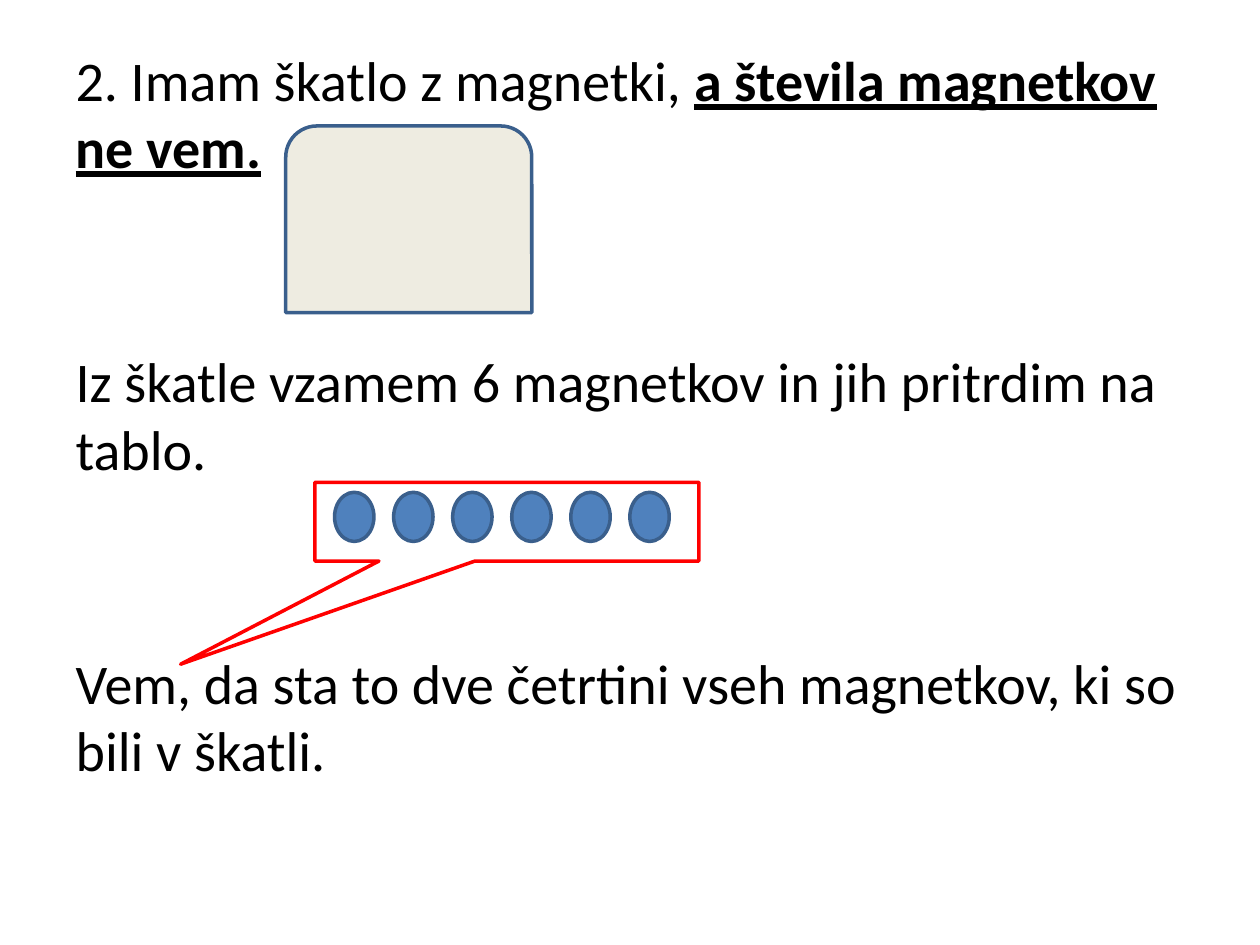
from pptx import Presentation
from pptx.dml.color import RGBColor
from pptx.enum.shapes import MSO_SHAPE
from pptx.enum.text import MSO_ANCHOR, MSO_AUTO_SIZE
from pptx.util import Pt

BLACK = RGBColor(0x00, 0x00, 0x00)
BLUE = RGBColor(0x4F, 0x81, 0xBD)
DARK_BLUE = RGBColor(0x3A, 0x5F, 0x8C)
CREAM = RGBColor(0xEE, 0xEC, 0xE1)
RED = RGBColor(0xFF, 0x00, 0x00)


def add_span(para, text, size=32, bold=False, underline=False, color=BLACK):
    span = para.add_run()
    span.text = text
    span.font.name = "Calibri"
    span.font.size = Pt(size)
    span.font.bold = bold
    span.font.underline = underline
    span.font.color.rgb = color


def add_outlined(page, kind, left, top, width, height, line, fill=None):
    shape = page.shapes.add_shape(kind, Pt(left), Pt(top), Pt(width), Pt(height))
    shape.shadow.inherit = False
    shape.line.color.rgb = line
    shape.line.width = Pt(2)
    if fill is None:
        shape.fill.background()
    else:
        shape.fill.solid()
        shape.fill.fore_color.rgb = fill
    return shape


deck = Presentation()
deck.slide_width, deck.slide_height = Pt(720), Pt(540)
page = deck.slides.add_slide(deck.slide_layouts[1])
title = page.shapes.title
title.element.getparent().remove(title.element)

# Exercise text, with room between the steps for the drawings
body = page.placeholders[1]
body.left, body.top, body.width, body.height = Pt(36), Pt(22.3), Pt(648), Pt(460)
frame = body.text_frame
frame.word_wrap = True
frame.auto_size = MSO_AUTO_SIZE.NONE
frame.vertical_anchor = MSO_ANCHOR.TOP

steps = [
    [("2. Imam škatlo z magnetki, ", False), ("a števila magnetkov ne vem.", True)],
    [("Iz škatle vzamem 6 magnetkov in jih pritrdim na tablo.", False)],
    [("Vem, da sta to dve četrtini vseh magnetkov, ki so bili v škatli.", False)],
]
for index, step in enumerate(steps):
    para = frame.paragraphs[0] if index == 0 else frame.add_paragraph()
    if index > 0:
        para.space_before = Pt(95.5)
    properties = para._p.get_or_add_pPr()
    properties.set("marL", "0")
    properties.set("indent", "0")
    properties.insert_element_before(
        properties.makeelement(
            "{http://schemas.openxmlformats.org/drawingml/2006/main}buNone", {}),
        "a:tabLst", "a:defRPr", "a:extLst")
    for text, stressed in step:
        add_span(para, text, bold=stressed, underline=stressed)

# Box of magnets
add_outlined(page, MSO_SHAPE.ROUND_2_SAME_RECTANGLE, 163.3, 72, 140.6, 106.7,
             DARK_BLUE, CREAM)

# Six magnets on the board
for index in range(6):
    add_outlined(page, MSO_SHAPE.FLOWCHART_CONNECTOR, 191.2 + 33.75 * index, 281.3,
                 22.5, 28.1, DARK_BLUE, BLUE)

# Callout joining the magnets to the last step
callout = add_outlined(page, MSO_SHAPE.RECTANGULAR_CALLOUT, 180, 275.6, 219.4, 45, RED)
callout.adjustments[0] = -0.85
callout.adjustments[1] = 1.81

deck.save("out.pptx")
